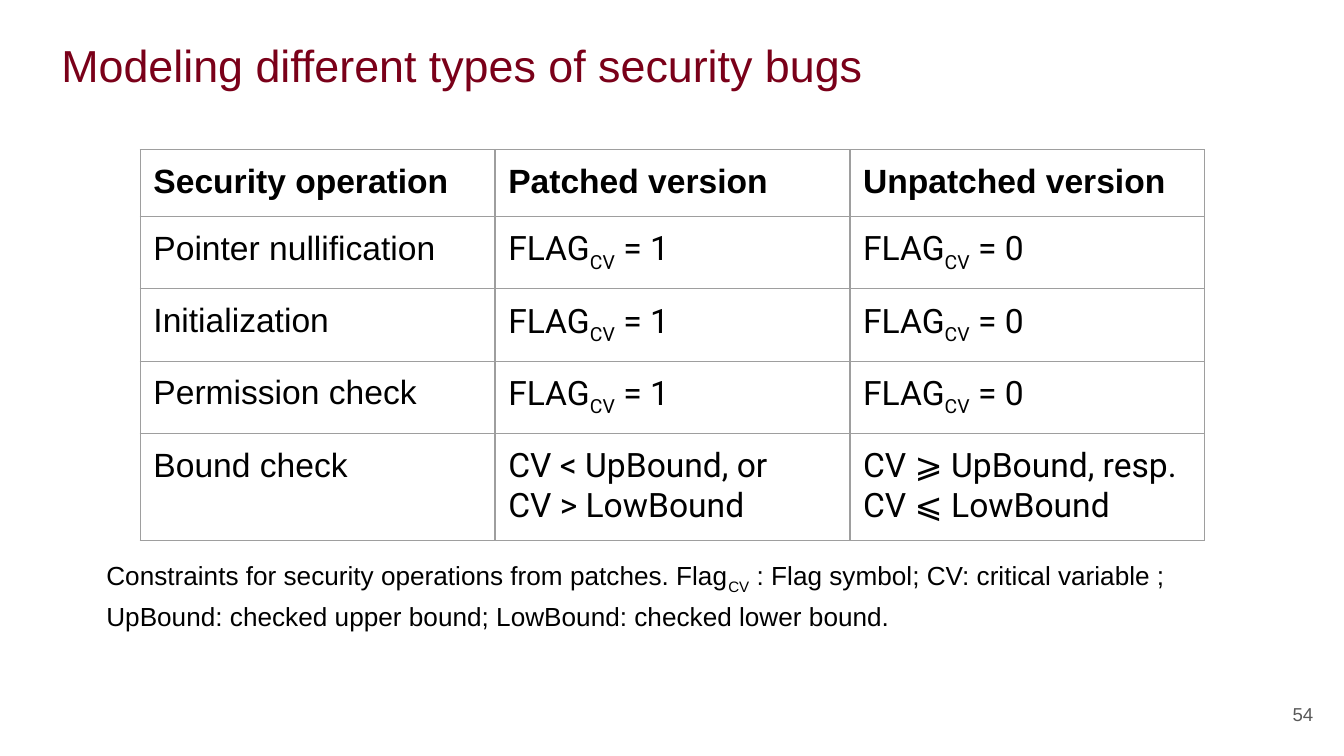
import pptx
import pptx.util
import pptx.dml.color
import pptx.enum.text
import lxml.etree
from pptx.oxml.ns import qn
from pptx.util import Cm

COLORS = {"title": "7A0019", "text": "000000", "border": "9E9E9E", "number": "595959"}
ANCHOR = pptx.enum.text.MSO_ANCHOR
ALIGN = pptx.enum.text.PP_ALIGN
INSET = Cm(0.25)


def flag_equals(value):
    return [[("FLAG", False), ("CV", True), (f" = {value}", False)]]


def plain(*lines):
    return [[(line, False)] for line in lines]


HEADINGS = ["Security operation", "Patched version", "Unpatched version"]
FLAG_OPERATIONS = ["Pointer nullification", "Initialization", "Permission check"]
ROWS = [
    [plain(heading) for heading in HEADINGS],
    *[[plain(name), flag_equals(1), flag_equals(0)] for name in FLAG_OPERATIONS],
    [
        plain("Bound check"),
        plain("CV < UpBound, or", "CV > LowBound"),
        plain("CV ⩾ UpBound, resp.", "CV ⩽ LowBound"),
    ],
]
CAPTION = [[
    ("Constraints for security operations from patches. Flag", False),
    ("CV", True),
    (" : Flag symbol; CV: critical variable ; UpBound: checked upper bound; "
     "LowBound: checked lower bound.", False),
]]


def write_text(frame, lines, size, color="text", font="Arial", bold=False,
               align=ALIGN.LEFT, spacing=1.0):
    for index, line in enumerate(lines):
        para = frame.add_paragraph() if index else frame.paragraphs[0]
        para.alignment = align
        para.line_spacing = spacing
        for text, subscript in line:
            span = para.add_run()
            span.text = text
            span.font.name = font
            span.font.size = pptx.util.Pt(size)
            span.font.bold = bold
            span.font.color.rgb = pptx.dml.color.RGBColor.from_string(COLORS[color])
            if subscript:
                span.font._element.set("baseline", "-25000")


def add_text(page, box, lines, size, anchor=ANCHOR.TOP, **style):
    frame = page.shapes.add_textbox(*box).text_frame
    frame.word_wrap = True
    frame.vertical_anchor = anchor
    frame.margin_left = frame.margin_right = INSET
    frame.margin_top = frame.margin_bottom = INSET
    write_text(frame, lines, size, **style)


def add_borders(cell):
    properties = cell._tc.get_or_add_tcPr()
    for side in ("lnL", "lnR", "lnT", "lnB"):
        line = lxml.etree.SubElement(properties, qn(f"a:{side}"), w=str(pptx.util.Pt(0.75)))
        fill = lxml.etree.SubElement(line, qn("a:solidFill"))
        lxml.etree.SubElement(fill, qn("a:srgbClr"), val=COLORS["border"])


def add_constraints_table(page, box):
    left, top, width, row_height = box
    column_count = len(HEADINGS)
    table = page.shapes.add_table(
        len(ROWS), column_count, left, top, width, row_height * len(ROWS)).table
    table.first_row = False
    table.horz_banding = False
    for column in table.columns:
        column.width = width // column_count
    for row_index, row in enumerate(ROWS):
        table.rows[row_index].height = row_height
        for column_index, lines in enumerate(row):
            cell = table.cell(row_index, column_index)
            cell.margin_left = cell.margin_right = INSET
            cell.margin_top = cell.margin_bottom = INSET
            add_borders(cell)
            cell.fill.background()
            is_formula = row_index > 0 and column_index > 0
            write_text(cell.text_frame, lines, 18, bold=row_index == 0,
                       font="Roboto" if is_formula else "Arial")


def build_constraints_slide(page):
    add_text(page, (Cm(0.91), Cm(0.43), Cm(23.67), Cm(1.6)),
             plain("Modeling different types of security bugs"), 24,
             anchor=ANCHOR.MIDDLE, color="title")
    add_constraints_table(page, (Cm(2.65), Cm(2.83), Cm(20.12), Cm(1.07)))
    add_text(page, (Cm(1.76), Cm(10.23), Cm(21.9), Cm(0.87)), CAPTION, 14, spacing=1.15)
    add_text(page, (Cm(23.55), Cm(12.95), Cm(1.52), Cm(1.09)), plain("54"), 10,
             anchor=ANCHOR.MIDDLE, color="number", align=ALIGN.RIGHT)


def main():
    deck = pptx.Presentation()
    deck.slide_width = Cm(25.4)
    deck.slide_height = Cm(14.29)
    build_constraints_slide(deck.slides.add_slide(deck.slide_layouts[6]))
    deck.save("out.pptx")


if __name__ == "__main__":
    main()
